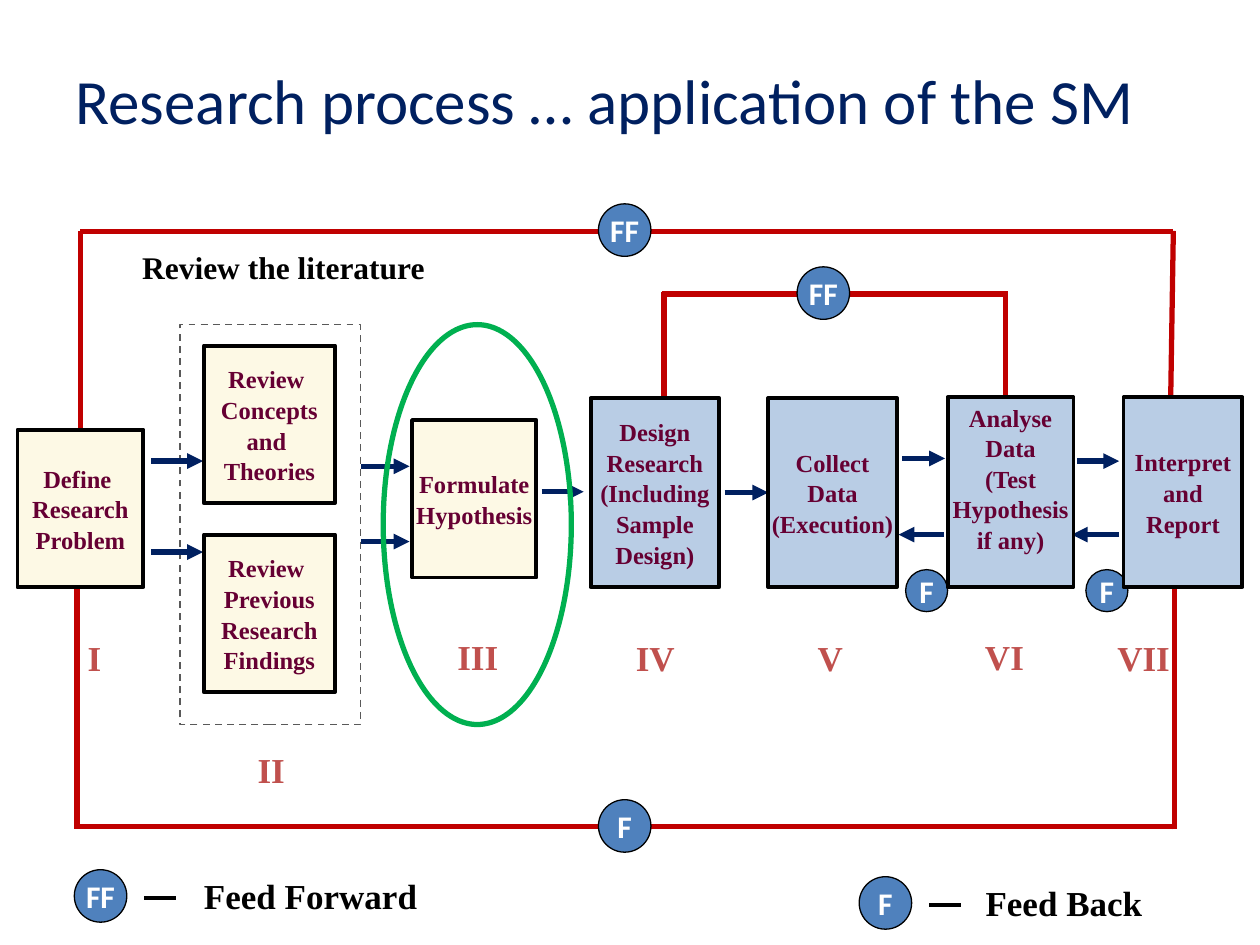
"""Build the research process slide with its feed-forward and feed-back loops."""
import lxml.etree
import pptx
import pptx.dml.color
import pptx.enum.dml
import pptx.enum.shapes
import pptx.enum.text
import pptx.oxml.ns
import pptx.util

Pt = pptx.util.Pt
RGBColor = pptx.dml.color.RGBColor
SHAPE = pptx.enum.shapes.MSO_SHAPE
ALIGN = pptx.enum.text.PP_ALIGN
MIDDLE = pptx.enum.text.MSO_ANCHOR.MIDDLE

NAVY = RGBColor(0x00, 0x20, 0x60)
RED = RGBColor(0xC0, 0x00, 0x00)
BRICK = RGBColor(0xC0, 0x50, 0x4D)
PLUM = RGBColor(0x66, 0x00, 0x33)
CREAM = RGBColor(0xFD, 0xF9, 0xE5)
PALE_BLUE = RGBColor(0xB9, 0xCD, 0xE5)
BLUE = RGBColor(0x4F, 0x81, 0xBD)
GREEN = RGBColor(0x00, 0xB0, 0x50)
GREY = RGBColor(0x59, 0x59, 0x59)
BLACK = RGBColor(0x00, 0x00, 0x00)
WHITE = RGBColor(0xFF, 0xFF, 0xFF)

SERIF = "Times New Roman"
STEP_FONT = {"name": SERIF, "size": Pt(14), "bold": True}
MARK_FONT = {"name": "Calibri", "size": Pt(18), "bold": True}
CAPTION_FONT = {"name": SERIF, "size": Pt(18), "bold": True}
LABEL_FONT = {"name": SERIF, "size": Pt(20), "bold": True}
TITLE_FONT = {"name": "Calibri", "size": Pt(36), "bold": False}

STEPS = [
    ("Review \nConcepts\nand \nTheories", (116.5, 197.5, 75, 90), CREAM),
    ("Review \nPrevious\nResearch\nFindings", (116.5, 305.5, 75, 90), CREAM),
    ("Formulate\nHypothesis", (235.5, 240, 71, 90), CREAM),
    ("Collect\nData\n(Execution)", (439, 227.5, 73.5, 108), PALE_BLUE),
    ("Analyse\nData\n(Test\nHypothesis\nif any)", (541.5, 227, 72, 108.5), PALE_BLUE),
    ("Design\nResearch\n(Including\nSample\nDesign)", (337.5, 227.5, 73.5, 108), PALE_BLUE),
    ("Interpret\nand\nReport", (642, 227, 68, 108.5), PALE_BLUE),
    ("Define \nResearch\nProblem", (10, 245.5, 72, 90), CREAM),
]
ARROWS = [
    (86.5, 116, 263.5), (86.5, 116, 315.5), (206.5, 234, 266.5), (206.5, 234, 309.5),
    (309.5, 333.5, 281), (515.5, 540, 262), (615.5, 639.5, 263.5),
    (539.5, 513.5, 305.5), (639.5, 612.5, 305.5),
]
LOOP_LINES = [
    (46, 132.5, 670.5, 132.5), (670.5, 132, 669, 227),
    (379.5, 167, 379.5, 227), (378, 168, 576, 168), (574.5, 167, 574.5, 227.5),
    (44, 335.5, 44, 474), (42.5, 472.5, 672, 472.5), (671, 474, 671, 335.5),
]
MARKS = [
    ("FF", 342, 116.5, 30), ("FF", 455.5, 152.5, 30), ("F", 342, 457, 30),
    ("F", 517.5, 325.5, 24), ("F", 620.5, 325.5, 24),
]
NUMERALS = [
    ("I", 36, 363.5, 36), ("II", 137, 427.5, 36), ("III", 252, 363, 42),
    ("IV", 353.5, 363.5, 42), ("V", 453.5, 363.5, 42), ("VI", 553, 363, 42),
    ("VII", 626.5, 363.5, 54),
]
LEGEND = [("FF", "Feed Forward", 42.5, 497, 96.5), ("F", "Feed Back", 491, 501, 527)]


def write(frame, text, font_values, color, align=ALIGN.CENTER, spacing=None):
    """Fill a text frame, one paragraph for each line of text."""
    frame.text = text
    frame.vertical_anchor = MIDDLE
    for paragraph in frame.paragraphs:
        for key, value in {"alignment": align, "line_spacing": spacing}.items():
            setattr(paragraph, key, value)
        for run in paragraph.runs:
            for key, value in font_values.items():
                setattr(run.font, key, value)
            run.font.color.rgb = color


def add_outline(slide, kind, place, line_color, width, fill=None):
    """Add a preset shape, hollow unless a fill is given."""
    outline = slide.shapes.add_shape(kind, *map(Pt, place))
    outline.shadow.inherit = False
    if fill is None:
        outline.fill.background()
    else:
        outline.fill.solid()
        outline.fill.fore_color.rgb = fill
    outline.line.color.rgb = line_color
    outline.line.width = Pt(width)
    return outline


def add_step(slide, text, place, fill):
    """Add one process step box."""
    step = add_outline(slide, SHAPE.RECTANGLE, place, BLACK, 2.25, fill)
    step.text_frame.word_wrap = False
    write(step.text_frame, text, STEP_FONT, PLUM, spacing=1.04)
    return step


def add_mark(slide, text, left, top, size):
    """Add a round feed-forward or feed-back mark."""
    mark = add_outline(slide, SHAPE.OVAL, (left, top, size, size), BLACK, 0.75, BLUE)
    mark.text_frame.word_wrap = False
    write(mark.text_frame, text, MARK_FONT, WHITE)


def add_label(slide, text, place, font_values, color):
    """Add a centred text label."""
    label = slide.shapes.add_textbox(*map(Pt, place))
    label.text_frame.word_wrap = True
    write(label.text_frame, text, font_values, color)


def add_line(slide, ends, color, width=3, arrow=False):
    """Add a straight connector, with an arrowhead if wanted."""
    straight = pptx.enum.shapes.MSO_CONNECTOR.STRAIGHT
    line = slide.shapes.add_connector(straight, *map(Pt, ends))
    line.line.color.rgb = color
    line.line.width = Pt(width)
    qn = pptx.oxml.ns.qn
    properties = line._element.spPr
    if arrow:
        lxml.etree.SubElement(properties.find(qn("a:ln")), qn("a:tailEnd"), type="triangle")
    lxml.etree.SubElement(properties, qn("a:effectLst"))
    return line


def add_title(slide, text):
    """Place and format the title placeholder."""
    title = slide.shapes.title
    place = {"left": Pt(36), "top": Pt(15), "width": Pt(647.5), "height": Pt(83.5)}
    for key, value in place.items():
        setattr(title, key, value)
    write(title.text_frame, text, TITLE_FONT, NAVY, ALIGN.LEFT)


def main():
    """Build and save the slide."""
    deck = pptx.Presentation()
    deck.slide_width, deck.slide_height = Pt(720), Pt(540)
    slide = deck.slides.add_slide(deck.slide_layouts[5])
    add_title(slide, "Research process … application of the SM")

    review = add_outline(slide, SHAPE.RECTANGLE, (103, 185.5, 103, 228.5), GREY, 1)
    review.line.dash_style = pptx.enum.dml.MSO_LINE.DASH
    for start, end, y in ARROWS:
        add_line(slide, (start, y, end, y), NAVY, arrow=True)
    to_collect = add_line(slide, (414, 281.5, 439, 281.5), NAVY, arrow=True)
    for ends in LOOP_LINES:
        add_line(slide, ends, RED)
    to_define = add_line(slide, (46, 132, 46, 245.5), RED)
    for mark in MARKS:
        add_mark(slide, *mark)

    steps = {text.split()[0]: add_step(slide, text, place, fill)
             for text, place, fill in STEPS}
    steps["Analyse"].text_frame.margin_bottom = Pt(20)
    to_collect.end_connect(steps["Collect"], 1)
    to_define.end_connect(steps["Define"], 0)

    for numeral, left, top, width in NUMERALS:
        add_label(slide, numeral, (left, top, width, 24), LABEL_FONT, BRICK)
    add_label(slide, "Review the literature", (60, 137.5, 204, 30), CAPTION_FONT, BLACK)
    for mark, meaning, left, top, text_left in LEGEND:
        add_mark(slide, mark, left, top, 30)
        add_line(slide, (left + 40, top + 16, left + 58, top + 16), BLACK, 2.25)
        add_label(slide, meaning, (text_left, top, 162, 30), LABEL_FONT, BLACK)
    add_outline(slide, SHAPE.OVAL, (219, 185.5, 107.5, 228.5), GREEN, 3)
    deck.save("out.pptx")


if __name__ == "__main__":
    main()
